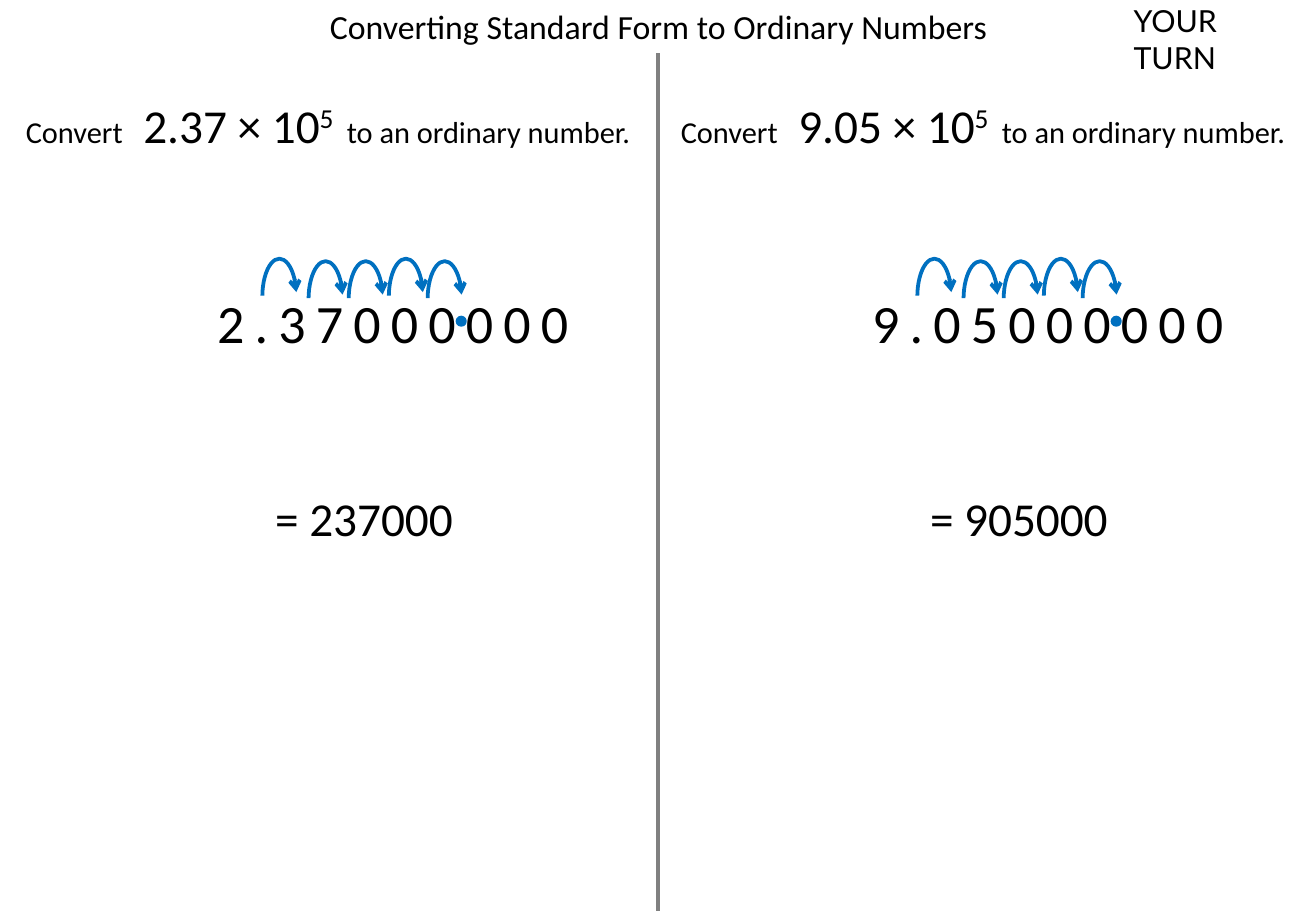
"""Build the slide on turning standard form into ordinary numbers."""
from lxml.etree import SubElement as Sub
from pptx import Presentation
from pptx.dml.color import RGBColor as Rgb
from pptx.enum.shapes import MSO_CONNECTOR as Conn, MSO_SHAPE as Form
from pptx.enum.text import MSO_AUTO_SIZE as Auto, PP_ALIGN as Align
from pptx.oxml.ns import qn
from pptx.util import Inches, Pt

TITLE = "Converting Standard Form to Ordinary Numbers"
LABEL = "YOUR TURN"
SUMS = [("2.37", "2.37000000", "237000"), ("9.05", "9.05000000", "905000")]
POWER = "5"

COLORS = {"ink": "000000", "rule": "808080", "hop": "0070C0"}
WIDE, HIGH = 10.83, 7.5
STEP = 49.77
BOXES = {
    "title": (23.92, 0, 52.26, 5.87),
    "label": (85.23, -0.4, 14.68, 5.33),
    "task": (-1.66, 9.87, 53.19, 7.6),
    "digits": (15.6, 31.07, 29.64, 8.53),
    "dot": (34.72, 34.8, 0.65, 0.93),
    "answer": (19.48, 53.07, 16.34, 7.6),
}
HOPS = [(19.94, 28.4), (23.45, 28.67), (26.5, 28.67), (29.55, 28.4), (32.5, 28.67)]
HOP_SIZE = (2.59, 8.27)
HOP_ARC = (109.54, 207.56)

deck = Presentation()
deck.slide_width, deck.slide_height = Inches(WIDE), Inches(HIGH)
slide = deck.slides.add_slide(deck.slide_layouts[6])
shapes = slide.shapes


def place(box, col=0):
    """Turn percent shares of the slide into lengths."""
    x, y, w, h = box
    shares = ((x + col * STEP, WIDE), (y, HIGH), (w, WIDE), (h, HIGH))
    return [Inches(share * full / 100) for share, full in shares]


def write(name, runs, col=0, align=Align.CENTER, wrap=True, font="Calibri"):
    """Add a text box made of (text, size, extra marks) runs."""
    frame = shapes.add_textbox(*place(BOXES[name], col)).text_frame
    frame.word_wrap = wrap
    frame.auto_size = Auto.SHAPE_TO_FIT_TEXT
    para = frame.paragraphs[0]
    para.alignment = align
    for text, size, marks in runs:
        run = para.add_run()
        run.text = text
        for key, value in {"name": font, "size": Pt(size)}.items():
            setattr(run.font, key, value)
        run.font.color.rgb = Rgb.from_string(COLORS["ink"])
        for key, value in marks.items():
            run._r.get_or_add_rPr().set(key, str(value))


def stroke(item, color, width):
    """Set the line of a shape or connector."""
    item.line.color.rgb = Rgb.from_string(COLORS[color])
    item.line.width = Pt(width)


def draw(form, box, col, width):
    """Add a blue shape without a shadow."""
    item = shapes.add_shape(form, *place(box, col))
    item.shadow.inherit = False
    stroke(item, "hop", width)
    return item


def hop(spot, col):
    """Add one curved arrow over the digits."""
    arc = draw(Form.ARC, spot + HOP_SIZE, col, 2.25)
    arc.fill.background()
    for i, turn in enumerate(HOP_ARC):
        arc.adjustments[i] = turn
    Sub(arc.line._get_or_add_ln(), qn("a:tailEnd"), type="arrow")


def panel(col, front, digits, answer):
    """Add one worked sum in its column."""
    write("task", [
        ("Convert", 18, {}), (" ", 18, {"spc": 814}),
        (f"{front} × 10", 28, {}), (POWER, 28, {"baseline": 30000}),
        (" ", 28, {"baseline": 30000, "spc": 420}),
        ("to an ordinary number.", 18, {}),
    ], col)
    write("digits", [(digits, 32, {"spc": 600})], col, Align.LEFT, False)
    dot = draw(Form.OVAL, BOXES["dot"], col, 1.5)
    dot.fill.solid()
    dot.fill.fore_color.rgb = Rgb.from_string(COLORS["hop"])
    for spot in HOPS:
        hop(spot, col)
    write("answer", [(f"= {answer}", 28, {})], col)


def main():
    """Draw all parts and save the deck."""
    x, y, _, h = place((50, 5.87, 0, 94.13))
    rule = shapes.add_connector(Conn.STRAIGHT, x, y, x, y + h)
    stroke(rule, "rule", 2.25)
    Sub(rule._element.spPr, qn("a:effectLst"))
    write("label", [(LABEL, 18, {})], align=Align.LEFT, font="Lato")
    for col, parts in enumerate(SUMS):
        panel(col, *parts)
    write("title", [(TITLE, 20, {})], wrap=False)
    deck.save("out.pptx")


if __name__ == "__main__":
    main()
